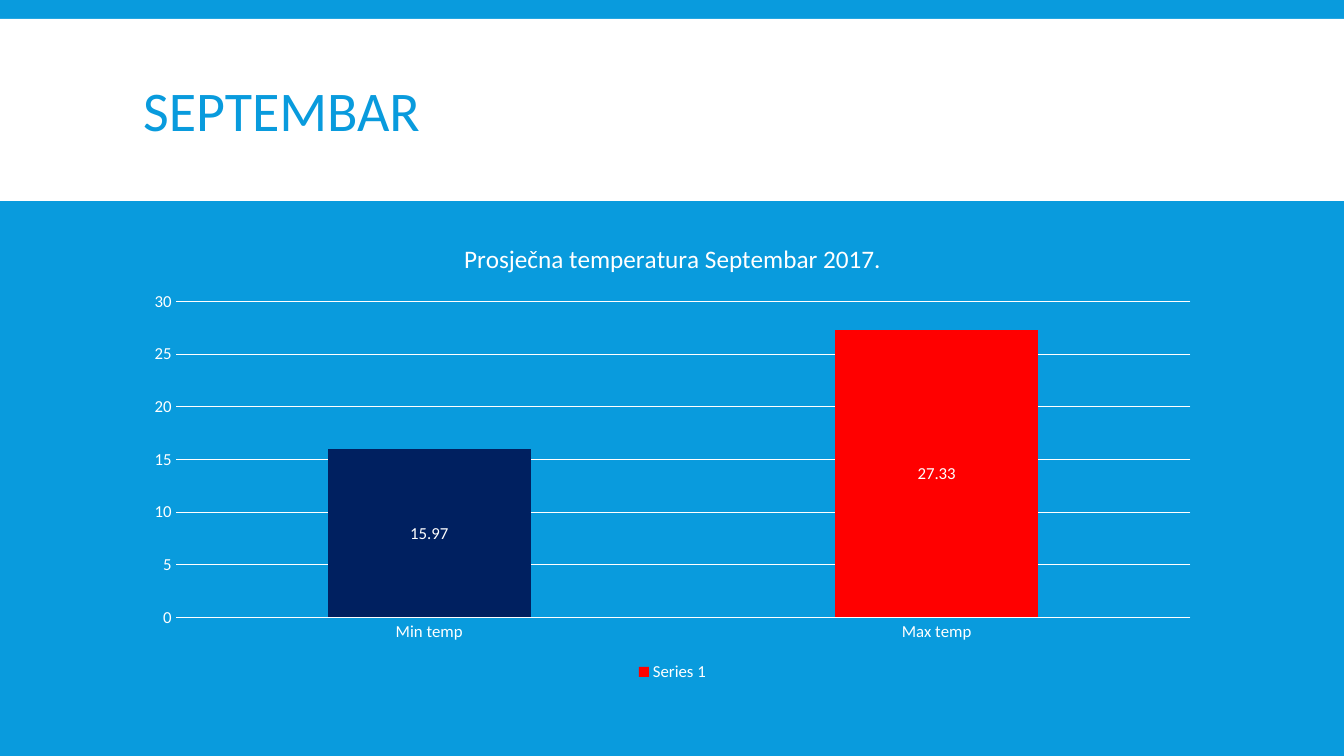
"""Build the September average temperature slide."""
import pptx
import pptx.chart.data
import pptx.dml.color
import pptx.enum.chart
import pptx.enum.shapes
import pptx.enum.text
import pptx.util

PX = 12192000 / 1344
COLORS = {"blue": "099BDD", "white": "FFFFFF", "navy": "002060", "red": "FF0000"}


def box(*lengths):
    return [pptx.util.Emu(round(n * PX)) for n in lengths]


def paint(target, name):
    target.solid()
    target.fore_color.rgb = pptx.dml.color.RGBColor.from_string(COLORS[name])


prs = pptx.Presentation()
prs.slide_width, prs.slide_height = box(1344, 756)
s = prs.slides.add_slide(prs.slide_layouts[5])
paint(s.background.fill, "blue")

band = s.shapes.add_shape(pptx.enum.shapes.MSO_SHAPE.RECTANGLE, *box(0, 19, 1344, 182))
band.shadow.inherit = False
paint(band.fill, "white")
band.line.fill.background()
s.shapes._spTree.insert(2, band._element)

title = s.shapes.title
title.left, title.top, title.width, title.height = box(133, 31, 1079, 166)
tf = title.text_frame
tf.text = "SEPTEMBAR"
tf.word_wrap = True
tf.vertical_anchor = pptx.enum.text.MSO_ANCHOR.MIDDLE
p = tf.paragraphs[0]
p.alignment = pptx.enum.text.PP_ALIGN.LEFT
p.line_spacing = 0.85
p.font.name = "Calibri"
p.font.size = pptx.util.Pt(40)
paint(p.font.fill, "blue")

data = pptx.chart.data.CategoryChartData()
data.categories = ["Min temp", "Max temp"]
data.add_series("Series 1", [15.97, 27.33])
chart = s.shapes.add_chart(
    pptx.enum.chart.XL_CHART_TYPE.COLUMN_CLUSTERED, *box(133, 222, 1079, 464), data
).chart

chart.has_title = True
p = chart.chart_title.text_frame.paragraphs[0]
p.text = "Prosječna temperatura Septembar 2017."
chart.chart_title.include_in_layout = False
chart.has_legend = True
chart.legend.position = pptx.enum.chart.XL_LEGEND_POSITION.BOTTOM
chart.legend.include_in_layout = False

plot = chart.plots[0]
plot.gap_width = 150
plot.vary_by_categories = False
temps = plot.series[0]
temps.invert_if_negative = False
paint(temps.format.fill, "red")
paint(temps.points[0].format.fill, "navy")
labels = temps.data_labels
labels.show_value = True
labels.position = pptx.enum.chart.XL_LABEL_POSITION.CENTER

axes = chart.category_axis, chart.value_axis
for axis in axes:
    axis.major_tick_mark = pptx.enum.chart.XL_TICK_MARK.NONE
    axis.format.line.fill.background()
chart.value_axis.minimum_scale = 0
chart.value_axis.maximum_scale = 30
chart.value_axis.major_unit = 5
grid = chart.value_axis.major_gridlines.format.line
grid.width = pptx.util.Pt(0.75)
paint(grid.fill, "white")

small = [chart.legend.font, labels.font] + [axis.tick_labels.font for axis in axes]
for font, size in [(chart.font, 10), (p.font, 18)] + [(f, 12) for f in small]:
    font.name = "Calibri"
    font.size = pptx.util.Pt(size)
    font.bold = False
    paint(font.fill, "white")

prs.save("out.pptx")
